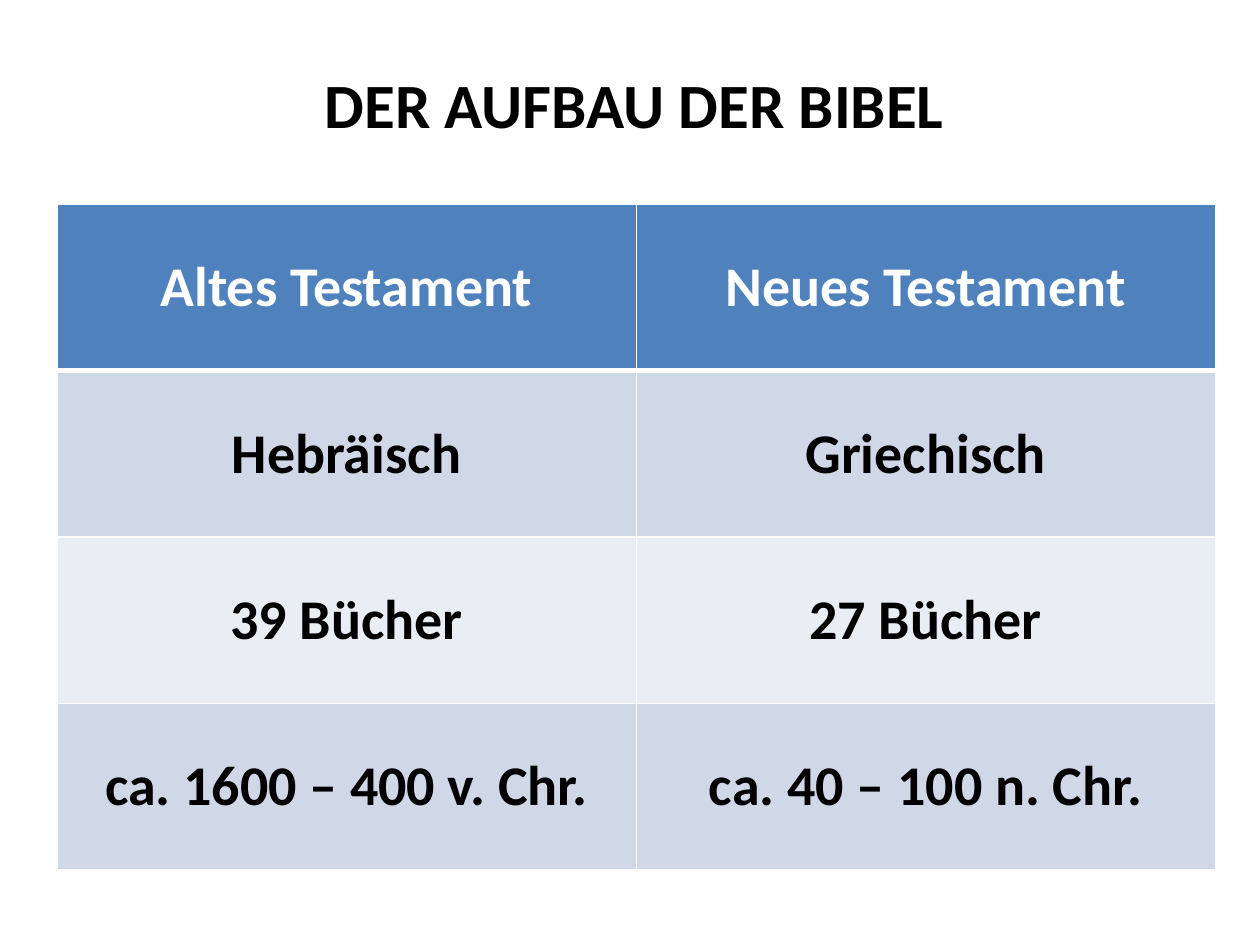
from dataclasses import dataclass

from lxml.etree import SubElement
from pptx import Presentation
from pptx.dml.color import RGBColor as Rgb
from pptx.enum.shapes import MSO_SHAPE as Shape
from pptx.enum.text import MSO_ANCHOR as Anchor, PP_ALIGN as Align
from pptx.oxml import parse_xml
from pptx.oxml.ns import nsdecls, qn
from pptx.util import Pt


@dataclass(frozen=True)
class Theme:
    font: str = "Calibri"
    title_size: int = 36
    cell_size: int = 32
    paper: str = "FFFFFF"
    ink: str = "000000"
    header: str = "4F81BD"
    bands: tuple = ("D0D8E8", "E9EDF4")
    thin: int = 1
    thick: int = 3


class SlideBuilder:
    def __init__(self, slide, theme):
        self.slide = slide
        self.theme = theme

    def label(self, frame, text, size, color):
        paragraph = frame.paragraphs[0]
        paragraph.alignment = Align.CENTER
        run = paragraph.add_run()
        run.text = text
        formats = {"name": self.theme.font, "size": Pt(size), "bold": True}
        for key, value in formats.items():
            setattr(run.font, key, value)
        run.font.color.rgb = Rgb.from_string(color)

    def title(self, text, left, top, width, height):
        banner = self.slide.shapes.add_shape(
            Shape.RECTANGLE, Pt(left), Pt(top), Pt(width), Pt(height))
        banner.shadow.inherit = False
        banner.line.fill.background()
        banner.fill.solid()
        banner.fill.fore_color.rgb = Rgb.from_string(self.theme.paper)
        color = banner._element.spPr.find(qn("a:solidFill"))[0]
        SubElement(color, qn("a:alpha"), val="60000")
        frame = banner.text_frame
        formats = {"word_wrap": True, "vertical_anchor": Anchor.TOP,
                   "margin_top": Pt(6), "margin_bottom": Pt(0)}
        for key, value in formats.items():
            setattr(frame, key, value)
        self.label(frame, text, self.theme.title_size, self.theme.ink)

    def borders(self, cell, **widths):
        # Border lines have to stand before the fill
        properties = cell._tc.get_or_add_tcPr()
        for index, side in enumerate("LRTB"):
            width = Pt(widths.get(side, self.theme.thin))
            properties.insert(index, parse_xml(
                f'<a:ln{side} {nsdecls("a")} w="{width}"><a:solidFill>'
                f'<a:srgbClr val="{self.theme.paper}"/>'
                f'</a:solidFill></a:ln{side}>'))

    def table(self, rows, left, top, width, height):
        theme = self.theme
        table = self.slide.shapes.add_table(
            len(rows), len(rows[0]), Pt(left), Pt(top), Pt(width), Pt(height)).table
        for r, texts in enumerate(rows):
            is_header = r == 0
            fill = theme.header if is_header else theme.bands[(r - 1) % 2]
            color = theme.paper if is_header else theme.ink
            # The header is set off by a thick rule
            rule = {0: {"B": theme.thick}, 1: {"T": theme.thick}}.get(r, {})
            for c, text in enumerate(texts):
                cell = table.cell(r, c)
                cell.vertical_anchor = Anchor.MIDDLE
                cell.fill.solid()
                cell.fill.fore_color.rgb = Rgb.from_string(fill)
                self.borders(cell, **rule)
                self.label(cell.text_frame, text, theme.cell_size, color)


def main():
    presentation = Presentation()
    presentation.slide_width, presentation.slide_height = Pt(720), Pt(540)
    slide = presentation.slides.add_slide(presentation.slide_layouts[6])
    builder = SlideBuilder(slide, Theme())

    # Heading
    builder.title("DER AUFBAU DER BIBEL", 31, 31.7, 663, 45.4)

    # Comparison of the two testaments
    testaments = [
        ("Altes Testament", "Neues Testament"),
        ("Hebräisch", "Griechisch"),
        ("39 Bücher", "27 Bücher"),
        ("ca. 1600 – 400 v. Chr.", "ca. 40 – 100 n. Chr."),
    ]
    builder.table(testaments, 32.6, 116.9, 662, 380)

    presentation.save("out.pptx")


if __name__ == "__main__":
    main()
